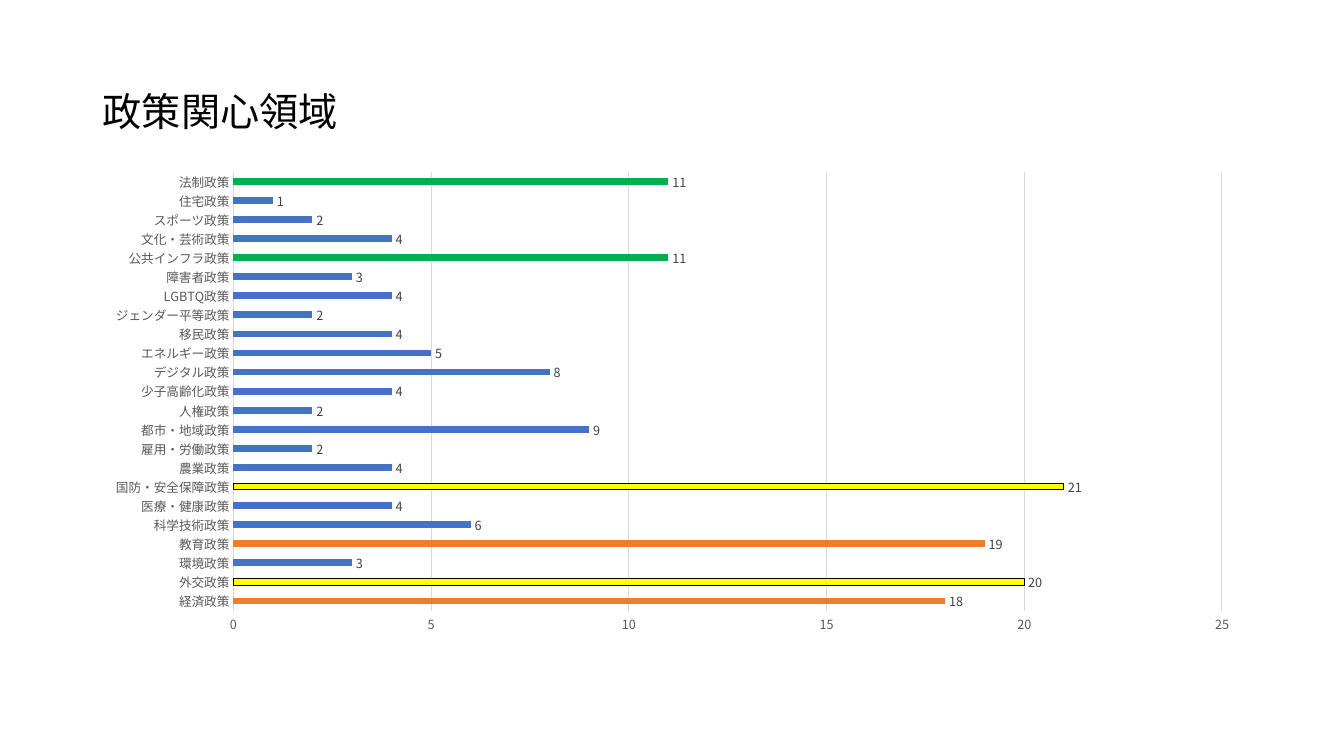
from lxml.etree import Element
from pptx import Presentation
from pptx.chart.data import CategoryChartData
from pptx.dml.color import RGBColor
from pptx.enum.chart import XL_CHART_TYPE, XL_LABEL_POSITION, XL_TICK_MARK
from pptx.enum.text import MSO_ANCHOR, MSO_AUTO_SIZE, PP_ALIGN
from pptx.oxml.ns import qn
from pptx.util import Inches, Pt

FONT = "Noto Sans CJK JP"
COLORS = {
    "title": "000000",
    "axis_text": "595959",
    "label_text": "404040",
    "grid": "D9D9D9",
    "bar": "4472C4",
    "top": "FFFF00",
    "high": "ED7D31",
    "medium": "00B050",
    "outline": "000000",
}
POLICY_INTERESTS = [
    ("経済政策", 18),
    ("外交政策", 20),
    ("環境政策", 3),
    ("教育政策", 19),
    ("科学技術政策", 6),
    ("医療・健康政策", 4),
    ("国防・安全保障政策", 21),
    ("農業政策", 4),
    ("雇用・労働政策", 2),
    ("都市・地域政策", 9),
    ("人権政策", 2),
    ("少子高齢化政策", 4),
    ("デジタル政策", 8),
    ("エネルギー政策", 5),
    ("移民政策", 4),
    ("ジェンダー平等政策", 2),
    ("LGBTQ政策", 4),
    ("障害者政策", 3),
    ("公共インフラ政策", 11),
    ("文化・芸術政策", 4),
    ("スポーツ政策", 2),
    ("住宅政策", 1),
    ("法制政策", 11),
]


def color(name):
    return RGBColor.from_string(COLORS[name])


def format_font(font, size, color_name):
    font.name = FONT
    font.size = Pt(size)
    font.color.rgb = color(color_name)


def format_line(line, color_name):
    line.color.rgb = color(color_name)
    line.width = Pt(0.75)


def apply_east_asian_font(element):
    """Give Japanese text the same typeface as Latin text."""
    for latin in list(element.iter(qn("a:latin"))):
        latin.addnext(Element(qn("a:ea"), typeface=FONT))


def add_title(slide, text):
    title = slide.shapes.title
    title.left, title.top = Inches(0.92), Inches(0.4)
    title.width, title.height = Inches(11.5), Inches(1.45)
    text_frame = title.text_frame
    text_frame.text = text
    text_frame.auto_size = MSO_AUTO_SIZE.NONE
    text_frame.vertical_anchor = MSO_ANCHOR.MIDDLE
    paragraph = text_frame.paragraphs[0]
    paragraph.alignment = PP_ALIGN.LEFT
    paragraph.line_spacing = 0.9
    format_font(paragraph.runs[0].font, 28, "title")
    apply_east_asian_font(title.element)


def format_axes(chart):
    for axis in (chart.category_axis, chart.value_axis):
        axis.major_tick_mark = XL_TICK_MARK.NONE
        axis.minor_tick_mark = XL_TICK_MARK.NONE
        format_font(axis.tick_labels.font, 9, "axis_text")
    format_line(chart.category_axis.format.line, "grid")
    value_axis = chart.value_axis
    value_axis.minimum_scale, value_axis.maximum_scale = 0, 25
    value_axis.major_unit = 5
    value_axis.format.line.fill.background()
    format_line(value_axis.major_gridlines.format.line, "grid")


def highlight_bars(series):
    """Colour the bars that reach 20, 15 and 10."""
    for index, value in enumerate(series.values):
        if value < 10:
            continue
        level = "top" if value >= 20 else "high" if value >= 15 else "medium"
        bar_format = series.points[index].format
        bar_format.fill.solid()
        bar_format.fill.fore_color.rgb = color(level)
        if level == "top":
            format_line(bar_format.line, "outline")


def add_bar_chart(slide, interests):
    data = CategoryChartData()
    data.categories = [policy for policy, count in interests]
    data.add_series("Series 1", [count for policy, count in interests])
    chart = slide.shapes.add_chart(
        XL_CHART_TYPE.BAR_CLUSTERED,
        Inches(0.92), Inches(1.61), Inches(11.5), Inches(4.76), data,
    ).chart
    chart.has_title = False
    chart.has_legend = False
    format_font(chart.font, 10, "title")
    format_axes(chart)

    plot = chart.plots[0]
    plot.gap_width = 182
    plot.vary_by_categories = False
    series = plot.series[0]
    series.format.fill.solid()
    series.format.fill.fore_color.rgb = color("bar")
    highlight_bars(series)

    labels = series.data_labels
    labels.show_value = True
    labels.position = XL_LABEL_POSITION.OUTSIDE_END
    format_font(labels.font, 9, "label_text")
    apply_east_asian_font(chart.element)


def main():
    presentation = Presentation()
    presentation.slide_width = Inches(13.33)
    presentation.slide_height = Inches(7.5)
    slide = presentation.slides.add_slide(presentation.slide_layouts[5])
    add_title(slide, "政策関心領域")
    add_bar_chart(slide, POLICY_INTERESTS)
    presentation.save("out.pptx")


if __name__ == "__main__":
    main()
